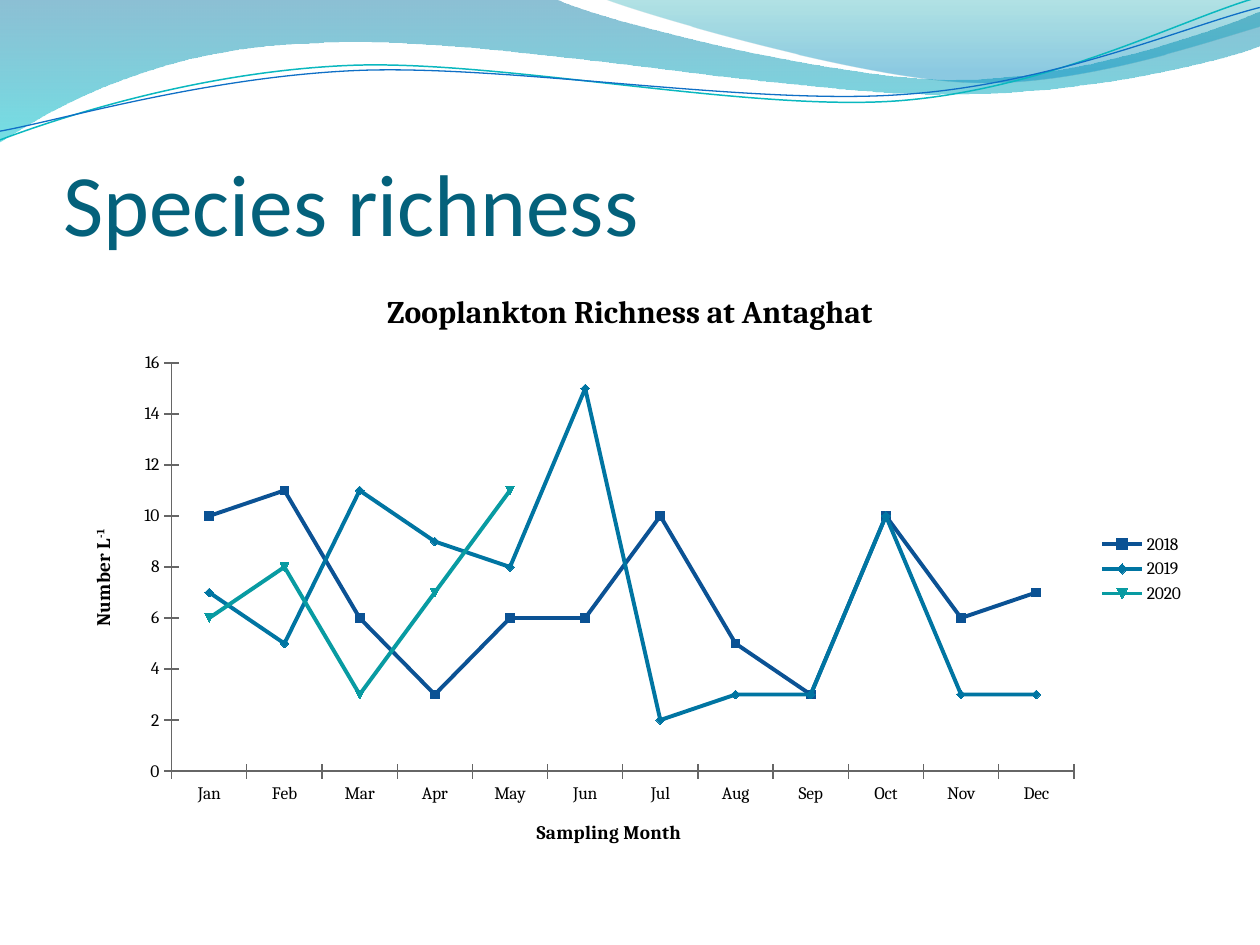
from math import cos, radians, sin

from lxml import etree
from pptx import Presentation
from pptx.chart.data import CategoryChartData
from pptx.dml.color import RGBColor
from pptx.enum.chart import XL_CHART_TYPE, XL_LEGEND_POSITION, XL_TICK_MARK
from pptx.enum.text import MSO_ANCHOR, MSO_AUTO_SIZE, PP_ALIGN
from pptx.oxml.ns import qn
from pptx.util import Pt

LINES = XL_CHART_TYPE.LINE_MARKERS
RIGHT = XL_LEGEND_POSITION.RIGHT
CROSS = XL_TICK_MARK.CROSS
LEFT, BOTTOM = PP_ALIGN.LEFT, MSO_ANCHOR.BOTTOM
NO_FIT = MSO_AUTO_SIZE.NONE

COLORS = {
    "title": "04617B", "text": "000000", "axis": "666666",
    "band top": "0074A1", "band foot": "00C6CF",
    "facet top": "00A1A9", "facet foot": "008BBF",
    "teal": "0AB8BF", "blue": "0F6FC6",
    "2018": "0B5294", "2019": "0075A2", "2020": "089BA2",
}

# Outlines in points: pairs are corners, sixes are Bezier curves
BAND = [(0, 0), (317, -0.7), (343, 12, 478, 45.4, 546, 45.4),
        (614, 45.4, 690, 19, 720, 6.5), (720.7, 26),
        (708, 31.7, 626, 54.7, 537, 54), (448, 54, 275, 20, 185, 24.5),
        (93, 26, 33, 60, -0.7, 81.4), (0, 0)]
FACET = [(345, -0.7), (366.5, 8, 491, 44.6, 553.7, 46.8),
         (616, 49.7, 692, 23, 720, 15), (720, 0), (345, -0.7)]
TEAL = [(0, 80), (34.6, 67, 113.8, 41, 199.4, 37.4),
        (284.4, 33.8, 427, 64, 513.4, 57.6),
        (599.8, 51, 675.4, 10.8, 718.6, -1.4)]
BLUE = [(0, 75), (33.8, 69, 118, 44, 203.8, 40.3),
        (290, 36.7, 430, 60.5, 516.2, 54), (602, 48.2, 677.5, 15, 720, 4.3)]
TILT = -2.7

MONTHS = "Jan Feb Mar Apr May Jun Jul Aug Sep Oct Nov Dec".split()
COUNTS = {
    "2018": [10, 11, 6, 3, 6, 6, 10, 5, 3, 10, 6, 7],
    "2019": [7, 5, 11, 9, 8, 15, 2, 3, 3, 10, 3, 3],
    "2020": [6, 8, 3, 7, 11] + [None] * 7,
}


def color(name):
    return RGBColor.from_string(COLORS[name])


def level(dots, tilt):
    """Turn the points back by the tilt, about their middle."""
    mid_x, mid_y = ((min(side) + max(side)) / 2 for side in zip(*dots))
    c, s = cos(radians(-tilt)), sin(radians(-tilt))
    return [(mid_x + (x - mid_x) * c - (y - mid_y) * s,
             mid_y + (x - mid_x) * s + (y - mid_y) * c) for x, y in dots]


def add_path(slide, outline, close, tilt=0):
    dots = [part[i:i + 2] for part in outline
            for i in range(0, len(part), 2)]
    dots = [(Pt(x), Pt(y)) for x, y in level(dots, tilt)]
    pen = slide.shapes.build_freeform(*dots[0])
    pen.add_line_segments(dots[1:], close=close)
    shape = pen.convert_to_shape()
    shape.shadow.inherit = False
    shape.rotation = tilt

    # Join each run of three points into one curve
    steps = iter(list(shape.element.iter(qn("a:lnTo"))))
    for part in outline[1:]:
        first = next(steps)
        if len(part) == 6:
            first.tag = qn("a:cubicBezTo")
            for _ in range(2):
                step = next(steps)
                first.append(step[0])
                step.getparent().remove(step)
    return shape


def add_wave(slide, outline, stops):
    """Add a filled wave; each stop is place, colour name and opacity."""
    shape = add_path(slide, outline, True)
    shape.line.fill.background()
    fill = shape.fill
    fill.gradient()
    fill.gradient_angle = 270
    for stop, (place, name, _) in zip(fill.gradient_stops, stops):
        stop.position = place
        stop.color.rgb = color(name)
    tints = shape.element.spPr.iter(qn("a:srgbClr"))
    for tint, (_, _, alpha) in zip(tints, stops):
        etree.SubElement(tint, qn("a:alpha")).set("val", str(alpha * 1000))


def add_curve(slide, outline, name, width):
    shape = add_path(slide, outline, False, TILT)
    shape.fill.background()
    shape.line.color.rgb = color(name)
    shape.line.width = Pt(width)


def set_title(slide, text):
    title = slide.shapes.title
    title.left, title.top = Pt(36), Pt(55)
    title.width, title.height = Pt(648), Pt(90)
    frame = title.text_frame
    frame.text = text
    frame.auto_size = NO_FIT
    frame.vertical_anchor = BOTTOM
    frame.margin_left = frame.margin_right = frame.margin_bottom = 0
    frame.margin_top = Pt(3.6)
    para = frame.paragraphs[0]
    para.alignment = LEFT
    para.font.size, para.font.name = Pt(50), "Calibri"
    para.font.color.rgb = color("title")


def set_label(label, text, size):
    """Write the title of a chart or an axis."""
    frame = label.text_frame
    frame.text = text
    para = frame.paragraphs[0]
    para.font.size, para.font.bold = Pt(size), True
    para.font.name = "Cambria"
    para.font.color.rgb = color("text")
    return para


def set_axis(axis):
    axis.has_major_gridlines = False
    axis.major_tick_mark = CROSS
    axis.format.line.color.rgb = color("axis")
    axis.format.line.width = Pt(0.75)


def add_lines(slide):
    data = CategoryChartData()
    data.categories = MONTHS
    for year, counts in COUNTS.items():
        data.add_series(year, counts)
    chart = slide.shapes.add_chart(
        LINES, Pt(36), Pt(152.3), Pt(648), Pt(345.6), data).chart
    chart.font.size, chart.font.name = Pt(10), "Cambria"
    chart.font.color.rgb = color("text")

    # Titles, axes and legend
    set_label(chart.chart_title, "Zooplankton Richness at Antaghat", 18)
    months, counts = chart.category_axis, chart.value_axis
    set_axis(months)
    set_axis(counts)
    set_label(months.axis_title, "Sampling Month", 11)
    power = set_label(counts.axis_title, "Number L", 11).add_run()
    power.text = "-1"
    power.font._element.set("baseline", "30000")
    chart.has_legend = True
    chart.legend.position = RIGHT
    chart.legend.include_in_layout = False

    # Series
    plot = chart.plots[0]
    plot.vary_by_categories = False
    for line in plot.series:
        line.smooth = False
        line.format.line.width = Pt(2.25)
        line.marker.size = 5
        look = line.marker.format
        look.fill.solid()
        for paint in (line.format.line.color, look.fill.fore_color,
                      look.line.color):
            paint.rgb = color(line.name)


def main():
    deck = Presentation()
    deck.slide_width, deck.slide_height = Pt(720), Pt(540)
    slide = deck.slides.add_slide(deck.slide_layouts[5])

    # Waves along the top
    add_wave(slide, BAND, [(0, "band top", 45), (1, "band foot", 55)])
    add_wave(slide, FACET, [(0, "facet top", 30), (0.8, "facet foot", 45)])
    add_curve(slide, TEAL, "teal", 0.85)
    add_curve(slide, BLUE, "blue", 0.75)

    # Content
    set_title(slide, "Species richness")
    add_lines(slide)
    deck.save("out.pptx")


if __name__ == "__main__":
    main()
